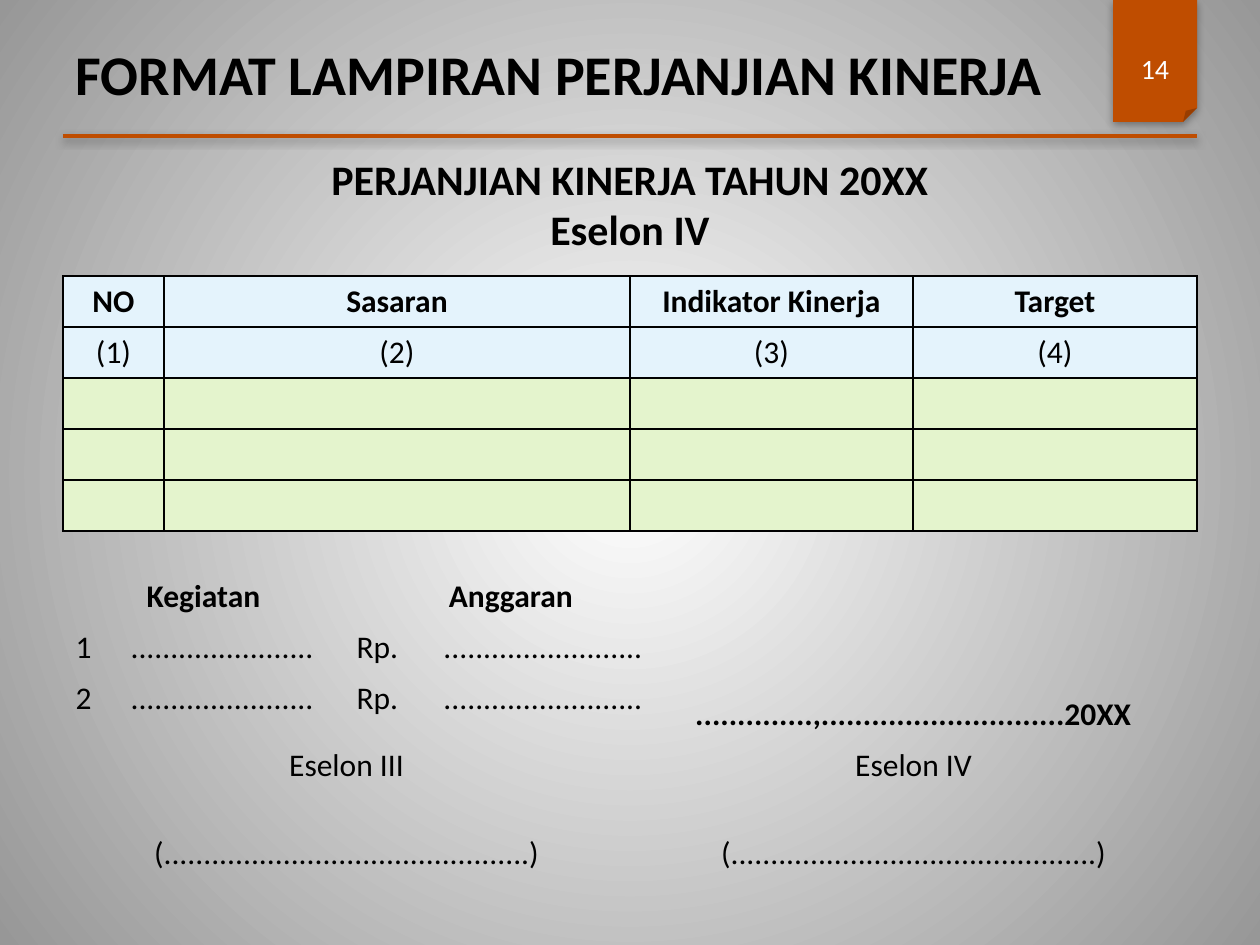
from dataclasses import dataclass

from lxml import etree
from pptx import Presentation
from pptx.dml.color import RGBColor
from pptx.enum.shapes import MSO_CONNECTOR, MSO_SHAPE
from pptx.enum.text import MSO_ANCHOR, PP_ALIGN
from pptx.oxml.ns import qn
from pptx.util import Emu, Pt

EMU_PER_PX = 914400 / 126
LEFT, CENTER = PP_ALIGN.LEFT, PP_ALIGN.CENTER
TOP, MIDDLE, BOTTOM = MSO_ANCHOR.TOP, MSO_ANCHOR.MIDDLE, MSO_ANCHOR.BOTTOM
FOLDED_CORNER = MSO_SHAPE.FOLDED_CORNER
STRAIGHT = MSO_CONNECTOR.STRAIGHT
NO_GRID_STYLE = "{2D5ABB26-0587-4C30-8999-92F81FD0307C}"


@dataclass(frozen=True)
class Theme:
    font: str = "Calibri"
    ink: str = "000000"
    white: str = "FFFFFF"
    edge: str = "979797"
    accent: str = "BF4D00"
    header: str = "E4F3FC"
    body: str = "E4F4CD"
    title: int = 32
    heading: int = 24
    table: int = 18
    number: int = 16


THEME = Theme()


@dataclass(frozen=True)
class Label:
    left: int
    top: int
    width: int
    height: int
    lines: tuple[str, ...]
    size: int
    bold: bool = True
    align: int = CENTER
    anchor: int = MIDDLE
    color: str = THEME.ink


@dataclass(frozen=True)
class Row:
    texts: tuple[str, ...]
    bold: bool = False
    align: int = CENTER
    anchor: int = TOP
    fill: str = ""
    height: int = 51


@dataclass(frozen=True)
class Grid:
    left: int
    top: int
    columns: tuple[int, ...]
    rows: tuple[Row, ...]
    bordered: bool = False
    header_pairs: tuple[int, ...] = ()


EMPTY_ROW = Row(("", "", "", ""), fill=THEME.body)
ACTIVITY_DOTS = "." * 23
BUDGET_DOTS = "." * 25
SIGNATURE = "(" + "." * 46 + ")"

LABELS = (
    Label(63, 21, 1061, 105, ("FORMAT LAMPIRAN PERJANJIAN KINERJA",),
          THEME.title, align=LEFT),
    Label(1113, 42, 84, 53, ("14",), THEME.number, bold=False, color=THEME.white),
    Label(63, 147, 1134, 115, ("PERJANJIAN KINERJA TAHUN 20XX", "Eselon IV"),
          THEME.heading, anchor=TOP),
)

TARGETS = Grid(63, 276, (101, 466, 283, 284), (
    Row(("NO", "Sasaran", "Indikator Kinerja", "Target"), bold=True, fill=THEME.header),
    Row(("(1)", "(2)", "(3)", "(4)"), fill=THEME.header),
    EMPTY_ROW, EMPTY_ROW, EMPTY_ROW,
), bordered=True)

BUDGETS = Grid(63, 571, (55, 226, 87, 247, 247), (
    Row(("Kegiatan", "", "Anggaran", "", ""), bold=True),
    *(Row((number, ACTIVITY_DOTS, "Rp.", BUDGET_DOTS, ""), align=LEFT)
      for number in ("1", "2")),
), header_pairs=(0, 2))

SIGNATURES = Grid(63, 689, (567, 567), (
    Row(("", "." * 14 + "," + "." * 29 + "20XX"), bold=True),
    Row(("Eselon III", "Eselon IV")),
    Row((SIGNATURE, SIGNATURE), anchor=BOTTOM, height=88),
))


def px(length: int) -> Emu:
    return Emu(round(length * EMU_PER_PX))


def rgb(color: str) -> RGBColor:
    return RGBColor.from_string(color)


def add_color(parent, color: str):
    fill = etree.SubElement(parent, qn("a:solidFill"))
    etree.SubElement(fill, qn("a:srgbClr"), val=color)


def write(para, text: str, size: int, bold: bool, align: int, color: str = THEME.ink):
    para.alignment = align
    span = para.add_run()
    span.text = text
    span.font.name = THEME.font
    span.font.size = Pt(size)
    span.font.bold = bold
    span.font.color.rgb = rgb(color)


def paint_background(page):
    """Radial gradient, light in the middle."""
    fill = page.background.fill
    fill.gradient()
    for stop, color in zip(fill.gradient_stops, (THEME.white, THEME.edge)):
        stop.color.rgb = rgb(color)
    gradient = next(page._element.iter(qn("a:gradFill")))
    for linear in gradient.findall(qn("a:lin")):
        gradient.remove(linear)
    path = etree.SubElement(gradient, qn("a:path"), path="circle")
    etree.SubElement(path, qn("a:fillToRect"), l="50000", t="50000", r="50000", b="50000")


def add_shadow(effects, distance: float, opacity: int):
    shadow = etree.SubElement(
        effects, qn("a:outerShdw"), blurRad=str(Pt(5)), dist=str(Pt(distance)),
        dir="5400000", rotWithShape="0")
    tint = etree.SubElement(shadow, qn("a:srgbClr"), val=THEME.ink)
    etree.SubElement(tint, qn("a:alpha"), val=str(opacity * 1000))


def add_number_tab(page):
    tab = page.shapes.add_shape(FOLDED_CORNER, px(1113), px(0), px(84), px(122))
    tab.fill.solid()
    tab.fill.fore_color.rgb = rgb(THEME.accent)
    tab.line.fill.background()
    tab.shadow.inherit = False
    add_shadow(tab._element.spPr.find(qn("a:effectLst")), 1.8, 35)


def add_title_rule(page):
    rule = page.shapes.add_connector(STRAIGHT, px(63), px(136), px(1197), px(136))
    rule.line.color.rgb = rgb(THEME.accent)
    rule.line.width = Pt(2)
    add_shadow(etree.SubElement(rule._element.spPr, qn("a:effectLst")), 1.6, 38)


def add_label(page, label: Label):
    box = page.shapes.add_textbox(
        px(label.left), px(label.top), px(label.width), px(label.height))
    frame = box.text_frame
    frame.word_wrap = True
    frame.vertical_anchor = label.anchor
    for index, line in enumerate(label.lines):
        para = frame.add_paragraph() if index else frame.paragraphs[0]
        write(para, line, label.size, label.bold, label.align, label.color)


def add_borders(cell):
    properties = cell._tc.get_or_add_tcPr()
    for side in ("lnL", "lnR", "lnT", "lnB"):
        add_color(etree.SubElement(properties, qn(f"a:{side}"), w=str(Pt(1))), THEME.ink)


def fill_cell(cell, text: str, row: Row, bordered: bool):
    if bordered:
        add_borders(cell)
    if row.fill:
        cell.fill.solid()
        cell.fill.fore_color.rgb = rgb(row.fill)
    else:
        cell.fill.background()
    cell.vertical_anchor = row.anchor
    para = cell.text_frame.paragraphs[0]
    if text:
        write(para, text, THEME.table, row.bold, row.align)
    else:
        para.font.size = Pt(THEME.table)


def add_grid(page, grid: Grid):
    height = sum(row.height for row in grid.rows)
    table = page.shapes.add_table(
        len(grid.rows), len(grid.columns), px(grid.left), px(grid.top),
        px(sum(grid.columns)), px(height)).table
    table.first_row = table.horz_banding = False
    table._tbl.tblPr.find(qn("a:tableStyleId")).text = NO_GRID_STYLE
    for column, width in zip(table.columns, grid.columns):
        column.width = px(width)
    for index, row in enumerate(grid.rows):
        table.rows[index].height = px(row.height)
        for column, text in enumerate(row.texts):
            fill_cell(table.cell(index, column), text, row, grid.bordered)
    for start in grid.header_pairs:
        table.cell(0, start).merge(table.cell(0, start + 1))


def main():
    deck = Presentation()
    deck.slide_width, deck.slide_height = px(1260), px(945)
    page = deck.slides.add_slide(deck.slide_layouts[6])
    paint_background(page)
    add_number_tab(page)
    add_title_rule(page)
    for label in LABELS:
        add_label(page, label)
    for grid in (TARGETS, BUDGETS, SIGNATURES):
        add_grid(page, grid)
    deck.save("out.pptx")


if __name__ == "__main__":
    main()
